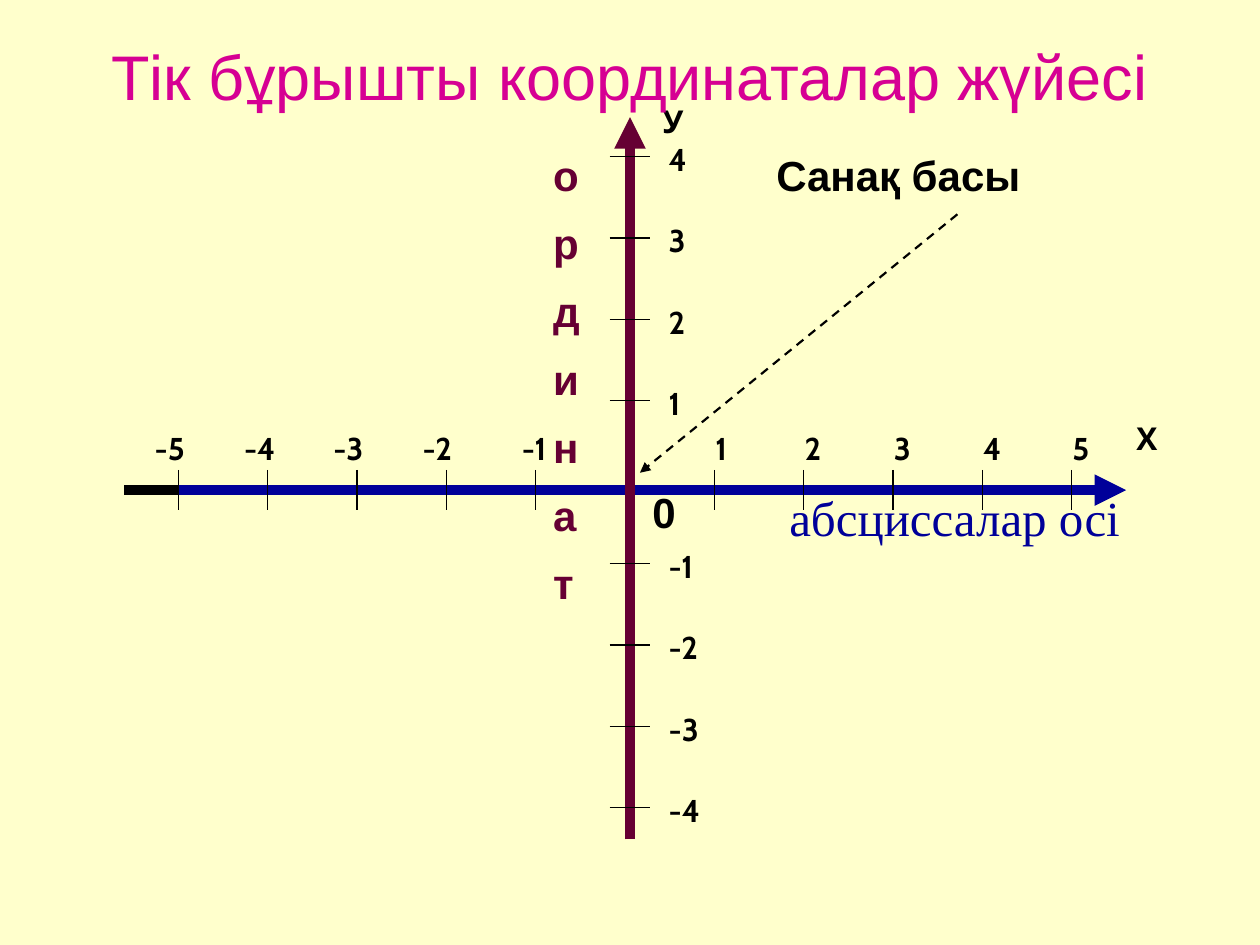
from lxml import etree
from pptx import Presentation
from pptx.dml.color import RGBColor
from pptx.enum import dml, shapes, text
from pptx.oxml import ns
from pptx.util import Cm, Pt

CREAM = RGBColor(0xFF, 0xFF, 0xCC)
BLACK = RGBColor(0, 0, 0)
BLUE = RGBColor(0, 0, 0x99)
WINE = RGBColor(0x66, 0, 0x33)
PINK = RGBColor(0xD6, 0, 0x93)

TITLE = "Тік бұрышты координаталар жүйесі"
ORIGIN = "Санақ басы"
XNAME = "абсциссалар осі"
YNAME = list("ординат")
XTICKS = [n for n in range(-5, 6) if n]
YTICKS = [n for n in range(-4, 5) if n]

# Lengths in cm
XAXIS, YAXIS = 9.88, 12.7      # level of the x axis, place of the y axis
XZERO, XSTEP = 12.6, 1.8       # horizontal scale
YZERO, YSTEP = 9.72, 1.64      # vertical scale
HALF = 0.41                    # half a tick mark


def line(x1, y1, x2, y2, color=BLACK, width=0.75, arrow=False, dash=False):
    item = slide.shapes.add_connector(
        shapes.MSO_CONNECTOR.STRAIGHT, Cm(x1), Cm(y1), Cm(x2), Cm(y2))
    item.line.color.rgb = color
    item.line.width = Pt(width)
    if dash:
        item.line.dash_style = dml.MSO_LINE.DASH
    if arrow:
        tail = etree.SubElement(item.line._get_or_add_ln(), ns.qn("a:tailEnd"))
        tail.set("type", "triangle")
    etree.SubElement(item._element.spPr, ns.qn("a:effectLst"))


def label(lines, x, y, w, h, size=18, font="Cabin", color=BLACK,
          bold=True, center=False):
    frame = slide.shapes.add_textbox(Cm(x), Cm(y), Cm(w), Cm(h)).text_frame
    frame.word_wrap = True
    frame.text = "\n".join(lines)
    for para in frame.paragraphs:
        if center:
            para.alignment = text.PP_ALIGN.CENTER
        for run in para.runs:
            run.font.size, run.font.name = Pt(size), font
            run.font.bold, run.font.color.rgb = bold, color
    return frame


def tight(frame):
    for i, para in enumerate(frame.paragraphs):
        para.line_spacing = 0.9
        if i:
            para.space_before = Pt(13)


deck = Presentation()
deck.slide_width, deck.slide_height = Cm(25.4), Cm(19.05)
slide = deck.slides.add_slide(deck.slide_layouts[6])
slide.background.fill.solid()
slide.background.fill.fore_color.rgb = CREAM

# Horizontal axis
left = XZERO - 5 * XSTEP
line(left, XAXIS, 22.7, XAXIS, BLUE, 6, arrow=True)
for n in XTICKS:
    x = XZERO + n * XSTEP
    line(x, XAXIS - HALF, x, XAXIS + HALF)
    shift = 0.23 if n > 0 else 0.53 if n == -1 else 0.73
    label([str(n)], x - shift, 8.53, 0.91 if n > 0 else 1.45, 1.02)
line(left, XAXIS, 2.5, XAXIS, width=6)
label("Х", 22.66, 8.33, 0.94, 1.02)
name = label([XNAME], 14.43, 9.93, 9.63, 1, 28, "Times New Roman", BLUE,
             bold=False, center=True)
name.vertical_anchor = text.MSO_ANCHOR.MIDDLE

# Vertical axis
line(YAXIS, 16.92, YAXIS, 2.36, WINE, 6, arrow=True)
for n in YTICKS:
    y = YZERO - n * YSTEP
    line(YAXIS - HALF, y, YAXIS + HALF, y)
    label([str(n)], 13.23, y - 0.46, 0.91 if n > 0 else 1.2, 1.02)
label("У", 13.11, 1.93, 0.94, 1.02)
tight(label(YNAME, 10.9, 3, 1, 9.68, 24, "Arial", WINE))

# Origin and heading
tight(label("0", 12.9, 9.8, 1.4, 1.17, 24, "Arial"))
tight(label([ORIGIN], 15.4, 3, 10, 1.17, 24, "Arial"))
line(19.3, 4.32, 12.9, 9.53, width=1.25, arrow=True, dash=True)
label([TITLE], 0.89, 0.64, 23.6, 1.6, 36, "Arial", PINK,
      bold=False, center=True)

deck.save("out.pptx")
